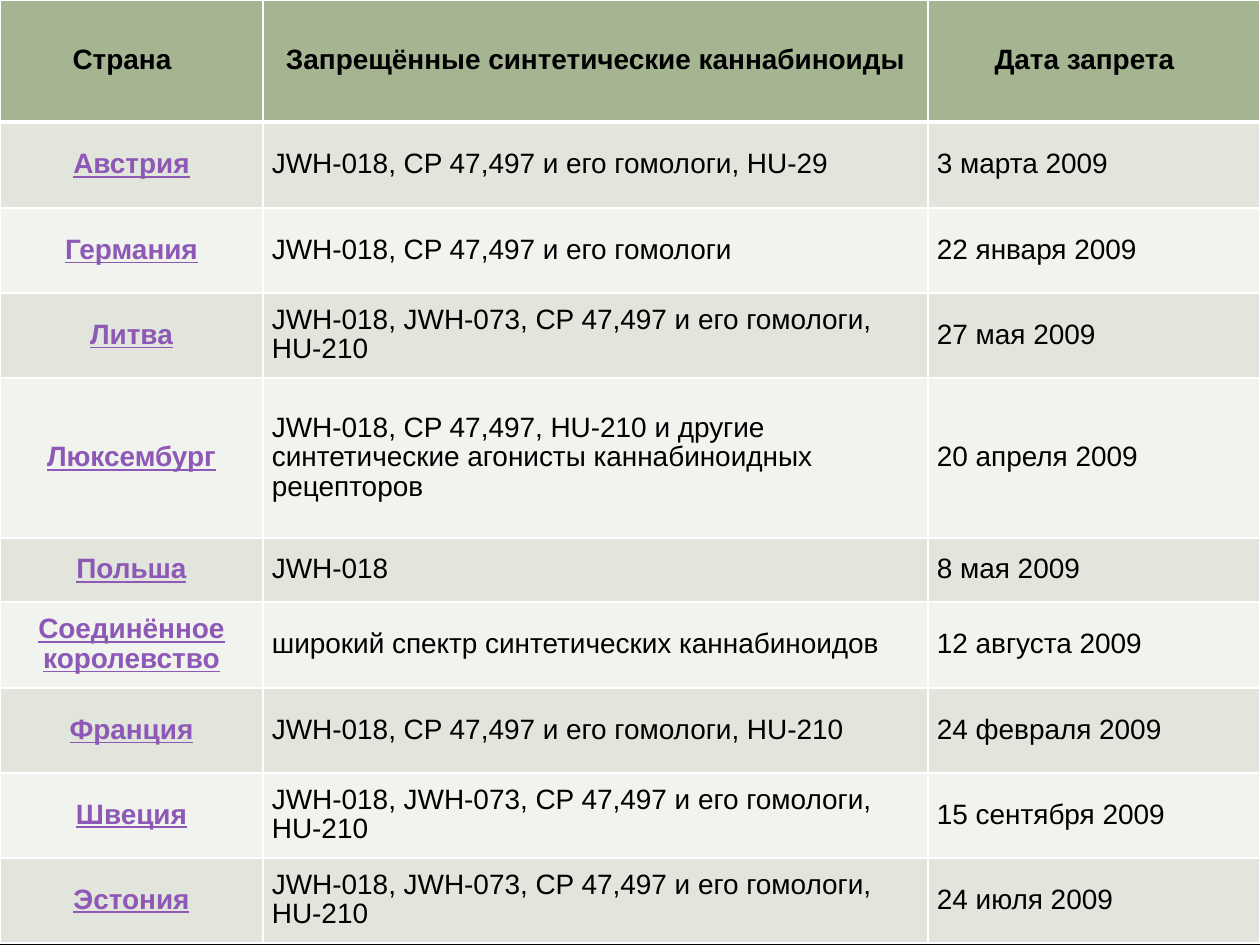
import lxml.etree
import pptx
import pptx.dml.color
import pptx.enum.text
import pptx.oxml.ns
import pptx.util

RGBColor = pptx.dml.color.RGBColor
PP_ALIGN = pptx.enum.text.PP_ALIGN

BLACK = RGBColor(0x00, 0x00, 0x00)
WHITE = RGBColor(0xFF, 0xFF, 0xFF)
HEADER_GREEN = RGBColor(0xA5, 0xB5, 0x92)
BANDS = (RGBColor(0xE1, 0xE5, 0xDC), RGBColor(0xF0, 0xF3, 0xEE))
LINK_PURPLE = RGBColor(0x8E, 0x58, 0xB6)

EMU_PER_PX = 914400 / 126
PAGE_WIDTH, PAGE_HEIGHT = 1260, 945
COLUMN_WIDTHS = (263, 665, 332)
ROW_HEIGHTS = (122, 86, 85, 85, 160, 64, 86, 85, 85, 85)
SIDE_MARGIN, WIDE_MARGIN, EDGE_MARGIN = 9, 28, 4
THIN, THICK = 1, 3

HEADERS = ("Страна", "Запрещённые синтетические каннабиноиды", "Дата запрета")
BANS = (
    ("Австрия", "JWH-018, CP 47,497 и его гомологи, HU-29", "3 марта 2009"),
    ("Германия", "JWH-018, CP 47,497 и его гомологи", "22 января 2009"),
    ("Литва", "JWH-018, JWH-073, CP 47,497 и его гомологи, HU-210", "27 мая 2009"),
    ("Люксембург",
     "JWH-018, CP 47,497, HU-210 и другие синтетические агонисты каннабиноидных рецепторов",
     "20 апреля 2009"),
    ("Польша", "JWH-018", "8 мая 2009"),
    ("Соединённое королевство", "широкий спектр синтетических каннабиноидов",
     "12 августа 2009"),
    ("Франция", "JWH-018, CP 47,497 и его гомологи, HU-210", "24 февраля 2009"),
    ("Швеция", "JWH-018, JWH-073, CP 47,497 и его гомологи, HU-210", "15 сентября 2009"),
    ("Эстония", "JWH-018, JWH-073, CP 47,497 и его гомологи, HU-210", "24 июля 2009"),
)


def px(length):
    return pptx.util.Emu(round(length * EMU_PER_PX))


def set_borders(cell, top=THIN, bottom=THIN):
    """Draw white cell borders; must run before the cell gets its fill."""
    qn = pptx.oxml.ns.qn
    properties = cell._tc.get_or_add_tcPr()
    for side, width in (("L", THIN), ("R", THIN), ("T", top), ("B", bottom)):
        line = lxml.etree.SubElement(properties, qn(f"a:ln{side}"), w=str(pptx.util.Pt(width)))
        fill = lxml.etree.SubElement(line, qn("a:solidFill"))
        lxml.etree.SubElement(fill, qn("a:srgbClr"), val=str(WHITE))


def fill_cell(cell, text, background, color=BLACK, bold=False, underline=False,
              align=PP_ALIGN.LEFT, right_margin=SIDE_MARGIN):
    cell.fill.solid()
    cell.fill.fore_color.rgb = background
    cell.vertical_anchor = pptx.enum.text.MSO_ANCHOR.MIDDLE
    cell.margin_left, cell.margin_right = px(SIDE_MARGIN), px(right_margin)
    cell.margin_top = cell.margin_bottom = px(EDGE_MARGIN)

    cell.text = text
    para = cell.text_frame.paragraphs[0]
    para.alignment = align
    para.line_spacing = pptx.util.Pt(16.8)
    para.space_before = para.space_after = pptx.util.Pt(12)
    para.font.name = "Arial"
    para.font.size = pptx.util.Pt(16)
    para.font.bold = bold
    para.font.underline = underline
    para.font.color.rgb = color


def add_header_row(table):
    for column, text in enumerate(HEADERS):
        cell = table.cell(0, column)
        set_borders(cell, bottom=THICK)
        fill_cell(cell, text, HEADER_GREEN, bold=True, align=PP_ALIGN.CENTER,
                  right_margin=SIDE_MARGIN if column == 1 else WIDE_MARGIN)


def add_ban_rows(table):
    for row, ban in enumerate(BANS, start=1):
        background = BANDS[(row - 1) % 2]
        for column, text in enumerate(ban):
            cell = table.cell(row, column)
            set_borders(cell, top=THICK if row == 1 else THIN)
            if column == 0:
                fill_cell(cell, text, background, color=LINK_PURPLE, bold=True,
                          underline=True, align=PP_ALIGN.CENTER)
            else:
                fill_cell(cell, text, background)


def add_ban_table(page):
    table = page.shapes.add_table(
        len(ROW_HEIGHTS), len(COLUMN_WIDTHS), 0, 0,
        px(sum(COLUMN_WIDTHS)), px(sum(ROW_HEIGHTS))).table
    for column, width in zip(table.columns, COLUMN_WIDTHS):
        column.width = px(width)
    for row, height in zip(table.rows, ROW_HEIGHTS):
        row.height = px(height)
    add_header_row(table)
    add_ban_rows(table)


def main():
    deck = pptx.Presentation()
    deck.slide_width, deck.slide_height = px(PAGE_WIDTH), px(PAGE_HEIGHT)
    page = deck.slides.add_slide(deck.slide_layouts[6])
    page.background.fill.solid()
    page.background.fill.fore_color.rgb = BLACK
    add_ban_table(page)
    deck.save("out.pptx")


if __name__ == "__main__":
    main()
